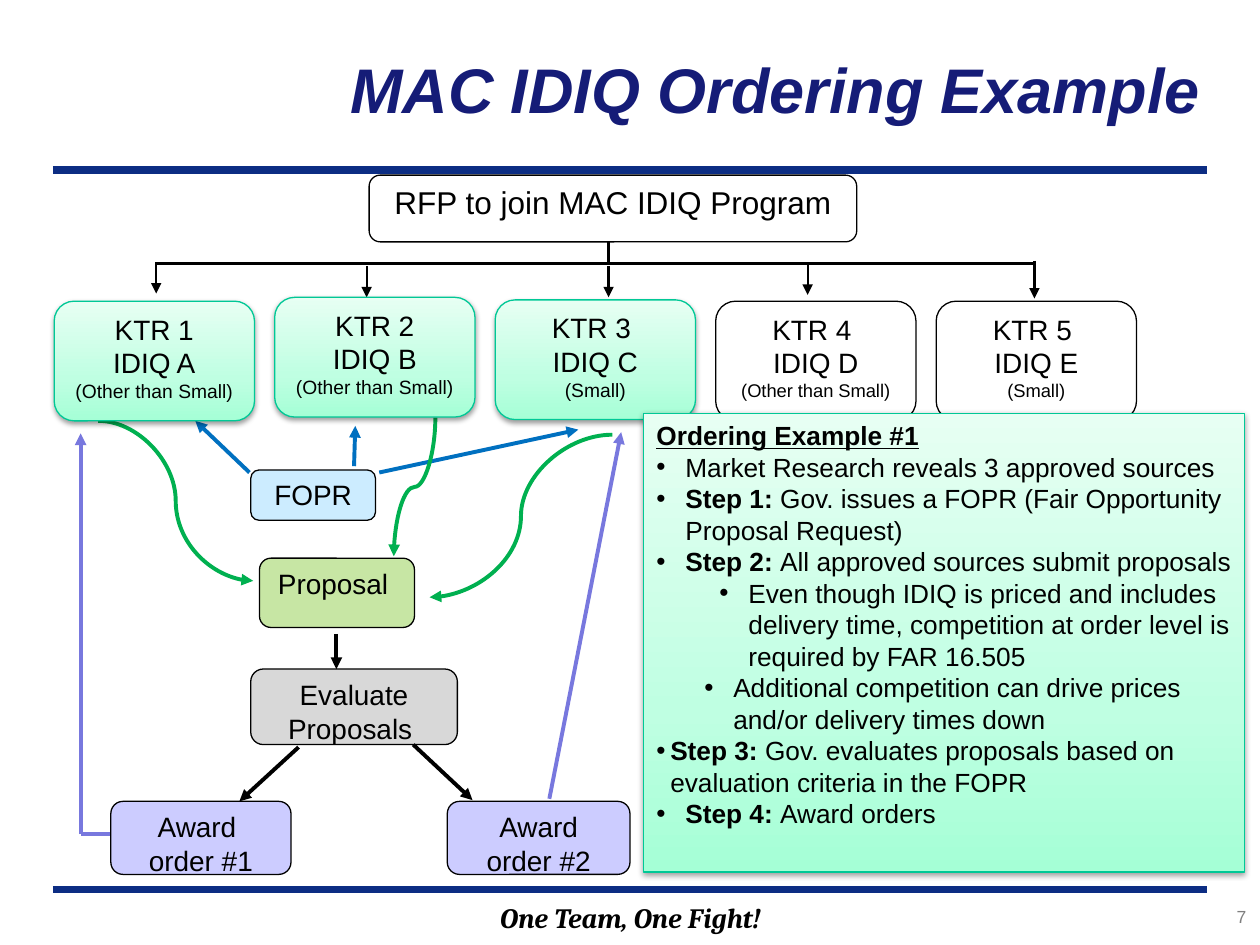
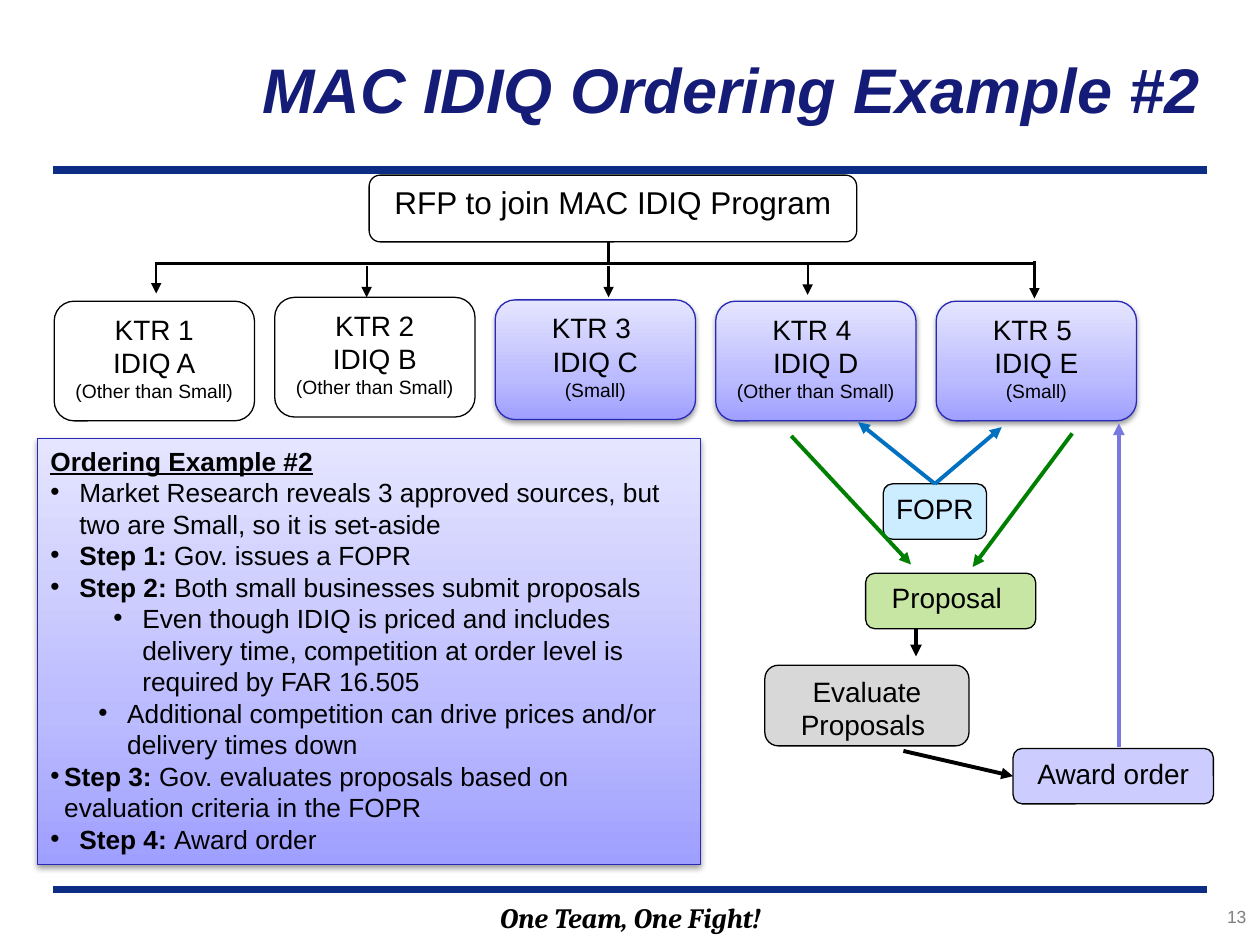
from copy import deepcopy

from lxml.etree import SubElement
from pptx import Presentation
from pptx.dml.color import RGBColor
from pptx.enum.shapes import MSO_CONNECTOR, MSO_SHAPE
from pptx.enum.text import MSO_ANCHOR, MSO_AUTO_SIZE, PP_ALIGN
from pptx.oxml.ns import qn
from pptx.util import Pt

PX = 9144  # one px is a hundredth of an inch
PAGE = (0, 0, 1000, 750)

# Colours
BLACK, WHITE, NAVY, BAND, GREY = "000000", "FFFFFF", "151C77", "0C2D83", "7F7F7F"
SKY, LIME, STONE, LILAC = "CCECFF", "C7E6A4", "B3B3B3", "CCCCFF"
BLUE, GREEN, FOREST, VIOLET = "0070C0", "00B050", "008000", "7878DE"
MINT = {"line": "00C896", "stops": ["A5FFD6", "BFFFE2", "E7FFF3"]}
IRIS = {"line": "2929B8", "stops": ["9F9FFF", "BBBBFF", "E5E5FF"]}

TITLE = {"name": "Arial", "size": Pt(36), "bold": True, "italic": True}
MOTTO = {"name": "Cambria", "size": Pt(16), "bold": True, "italic": True}
NUMBER = {"name": "Arial", "size": Pt(10)}
LEAD = {"name": "Arial", "size": Pt(15), "bold": True}
BODY = {**LEAD, "bold": False}
HEAD = {**LEAD, "underline": True}


# Basic helpers
def hue(code):
    return RGBColor.from_string(code)


def put(item, values):
    for key, value in values.items():
        setattr(item, key, value)


def place(box, part):
    """Turn px relative to a box into EMU on the slide."""
    return [(box[i % 2] * (i < 2) + part[i]) * PX for i in range(4)]


def write(para, text, style, color=BLACK):
    run = para.add_run()
    run.text = text
    put(run.font, style)
    run.font.color.rgb = hue(color)


def label(slide, box, part, text, style, color, align):
    area = slide.shapes.add_textbox(*place(box, part)).text_frame
    area.word_wrap = True
    para = area.paragraphs[0]
    para.alignment = align
    write(para, text, style, color)


def glow(shape, shade):
    """Give a shape a three-stop gradient, a thin edge and a soft shadow."""
    props = shape._element.spPr
    shape.fill.gradient()
    shape.fill.gradient_angle = 90
    stops = props.find(qn("a:gradFill")).find(qn("a:gsLst"))
    stops.insert(1, deepcopy(stops[0]))
    for stop, spot, code in zip(shape.fill.gradient_stops, (0, 0.35, 1), shade["stops"]):
        stop.position = spot
        stop.color.rgb = hue(code)
    shape.line.color.rgb = hue(shade["line"])
    shape.line.width = Pt(0.75)
    shape.shadow.inherit = False
    cast = SubElement(props.find(qn("a:effectLst")), qn("a:outerShdw"),
                      blurRad="40000", dist="20000", dir="5400000", rotWithShape="0")
    tint = SubElement(cast, qn("a:srgbClr"), val=BLACK)
    SubElement(tint, qn("a:alpha"), val="38000")


def node(slide, box, part, lines, fill=WHITE, sizes=(16, 16, 11)):
    """Draw a rounded box; fill is a colour or a gradient shade."""
    shape = slide.shapes.add_shape(MSO_SHAPE.FLOWCHART_ALTERNATE_PROCESS, *place(box, part))
    if isinstance(fill, dict):
        glow(shape, fill)
    else:
        shape.shadow.inherit = False
        shape.fill.solid()
        shape.fill.fore_color.rgb = hue(fill)
        shape.line.color.rgb = hue(BLACK)
        shape.line.width = Pt(0.75)
    area = shape.text_frame
    put(area, {"margin_left": 7 * PX, "margin_right": 7 * PX, "margin_top": 4 * PX,
               "margin_bottom": 4 * PX, "vertical_anchor": MSO_ANCHOR.TOP,
               "word_wrap": True})
    for i, (text, size) in enumerate(zip(lines, sizes)):
        para = area.add_paragraph() if i else area.paragraphs[0]
        para.alignment = PP_ALIGN.CENTER
        write(para, text, {"name": "Arial", "size": Pt(size)})
    return shape


def wire(slide, box, ends, color=BLACK, width=2.25, arrow=True, kind=MSO_CONNECTOR.STRAIGHT):
    x, y = box[:2]
    ends = [(a + b) * PX for a, b in zip(ends, (x, y, x, y))]
    link = slide.shapes.add_connector(kind, *ends)
    link.line.color.rgb = hue(color)
    link.line.width = Pt(width)
    props = link._element.spPr
    if arrow:
        SubElement(props.get_or_add_ln(), qn("a:tailEnd"), type="triangle")
    SubElement(props, qn("a:effectLst"))
    return link


def check(slide, box, part):
    """Draw the half-clear evaluation box."""
    shape = node(slide, box, part, ["Evaluate Proposals "], STONE)
    tint = shape._element.spPr.find(qn("a:solidFill"))[0]
    SubElement(tint, qn("a:alpha"), val="50000")


# Title, bands and footer
def frame(slide, box, title, page):
    for y in (706, 135):
        wire(slide, box, (42, y, 958, y), BAND, 4.5, False)
    label(slide, box, (42, 710, 917, 37), "One Team, One Fight!", MOTTO, BLACK,
          PP_ALIGN.CENTER)
    label(slide, box, (874, 714, 125, 33), page, NUMBER, GREY, PP_ALIGN.RIGHT)
    head = slide.shapes.title
    put(head, dict(zip(("left", "top", "width", "height"),
                       place(box, (182, 8, 781, 125)))))
    put(head.text_frame, {"auto_size": MSO_AUTO_SIZE.NONE, "word_wrap": True,
                          "vertical_anchor": MSO_ANCHOR.MIDDLE})
    para = head.text_frame.paragraphs[0]
    para.alignment = PP_ALIGN.RIGHT
    write(para, title, TITLE, NAVY)


# Programme box with its five contractors
def tree(slide, box, lit, shade, plain):
    wire(slide, box, (440, 49, 440, 69), width=1.5, arrow=False)
    node(slide, box, (250, 0, 387, 53), ["RFP to join MAC IDIQ Program"], sizes=[18])
    drops = [(81, 69, 25), (248, 72, 25), (440, 72, 25), (598, 70, 25), (778, 68, 30)]
    for x, y, fall in drops:
        wire(slide, box, (x, y, x, y + fall), width=1.25)
    names = ["KTR 1", "KTR 2", "KTR 3 ", "KTR 4 ", "KTR 5 "]
    for i, (name, y) in enumerate(zip(names, (100, 97, 99, 100, 100))):
        kind = "(Small)" if i in (2, 4) else "(Other than Small)"
        fill, size = (shade, 11) if i in lit else (WHITE, plain)
        node(slide, box, (175 * i, y, 159, 95), [name, f"IDIQ {'ABCDE'[i]}", kind],
             fill, (16, 16, size))
    wire(slide, box, (81, 70, 779, 70), width=1.5, arrow=False)


# Order flow with two awards
def double(slide, box):
    # Request
    node(slide, box, (135, 42, 99, 40), ["FOPR"], SKY)
    for ends in ((134, 44, 91, 3), (237, 44, 395, 10), (217, 39, 218, 7)):
        wire(slide, box, ends, BLUE)
    # Proposals
    node(slide, box, (142, 112, 123, 55), ["Proposal "], LIME)
    for ends, turn in (((14, 3, 137, 130), 0), ((422, 14, 277, 143), 0),
                       ((210, 39, 320, 72), 90)):
        bend = wire(slide, box, ends, GREEN, kind=MSO_CONNECTOR.CURVE)
        bend._element.spPr.get_or_add_xfrm().rot = turn
    # Awards
    wire(slide, box, (0, 331, 56, 331), VIOLET, arrow=False)
    node(slide, box, (24, 305, 143, 58), ["Award ", "order #1"], LILAC)
    node(slide, box, (291, 305, 145, 58), ["Award", "order #2"], LILAC)
    for ends in ((372, 303, 429, 12), (0, 331, 0, 13)):
        wire(slide, box, ends, VIOLET)
    # Evaluation
    check(slide, box, (135, 200, 164, 60))
    for ends in ((203, 172, 203, 200), (173, 262, 126, 305), (264, 260, 311, 304)):
        wire(slide, box, ends)


# Order flow with one award
def single(slide, box):
    fopr = node(slide, box, (94, 49, 82, 44), ["FOPR"], SKY)
    node(slide, box, (80, 120, 135, 44), ["Proposal "], LIME)
    award = node(slide, box, (197, 259, 159, 44), ["Award order"], LILAC)
    check(slide, box, (0, 193, 162, 64))
    for ends in ((136, 49, 188, 4), (136, 49, 74, 0)):
        wire(slide, box, ends, BLUE).begin_connect(fopr, 0)
    wire(slide, box, (110, 261, 197, 280)).end_connect(award, 1)
    wire(slide, box, (120, 164, 120, 186))
    wire(slide, box, (281, 258, 281, 1), VIOLET)
    for ends in ((244, 9, 165, 115), (21, 11, 116, 113)):
        wire(slide, box, ends, FOREST)


# Step list in a shaded panel
def panel(slide, box, shade, title, source, first, second, last):
    body = slide.placeholders[1]
    put(body, dict(zip(("left", "top", "width", "height"), place(box, (0, 0, *box[2:])))))
    glow(body, shade)
    slide.shapes._spTree.append(body._element)  # bring to front
    area = body.text_frame
    put(area, {"auto_size": MSO_AUTO_SIZE.NONE, "word_wrap": True,
               "vertical_anchor": MSO_ANCHOR.TOP})
    rows = [
        (0, "", ""),
        (23, "", source),
        (23, "Step 1: ", first),
        (23, "Step 2: ", second),
        (73, "", "Even though IDIQ is priced and includes delivery time, "
                 "competition at order level is required by FAR 16.505"),
        (61, "", "Additional competition can drive prices and/or delivery times down"),
        (11, "Step 3: ", "Gov. evaluates proposals based on evaluation criteria in the FOPR"),
        (23, "Step 4: ", last),
    ]
    for i, (left, lead, text) in enumerate(rows):
        para = area.add_paragraph() if i else area.paragraphs[0]
        props = para._p.get_or_add_pPr()
        props.set("marL", str(left * PX))
        props.set("indent", str(-min(left, 23) * PX))
        if i:
            SubElement(props, qn("a:buFont"), typeface="Arial")
            SubElement(props, qn("a:buChar"), char="•")
        else:
            SubElement(props, qn("a:buNone"))
        put(para, {"level": int(left > 23), "space_before": Pt(0),
                   "alignment": PP_ALIGN.LEFT})
        if not i:
            write(para, title, HEAD)
        if lead:
            write(para, lead, LEAD)
        if text:
            write(para, text, BODY)


def main():
    deck = Presentation()
    put(deck, {"slide_width": PAGE[2] * PX, "slide_height": PAGE[3] * PX})
    layout = deck.slide_layouts[1]
    top = (43, 139, 859, 195)

    slide = deck.slides.add_slide(layout)
    frame(slide, PAGE, "MAC IDIQ Ordering Example", "7")
    double(slide, (64, 331, 436, 363))
    tree(slide, top, (0, 1, 2), MINT, 10.5)
    panel(slide, (511, 328, 477, 364), MINT, "Ordering Example #1",
          "Market Research reveals 3 approved sources",
          "Gov. issues a FOPR (Fair Opportunity Proposal Request)",
          "All approved sources submit proposals", "Award orders")

    slide = deck.slides.add_slide(layout)
    frame(slide, PAGE, "MAC IDIQ Ordering Example #2", "13")
    tree(slide, top, (2, 3, 4), IRIS, 11)
    panel(slide, (30, 348, 526, 338), IRIS, "Ordering Example #2",
          "Market Research reveals 3 approved sources, but two are Small, so it is set-aside",
          "Gov. issues a FOPR", "Both small businesses submit proposals", "Award order")
    single(slide, (607, 335, 356, 303))

    deck.save("out.pptx")


if __name__ == "__main__":
    main()
